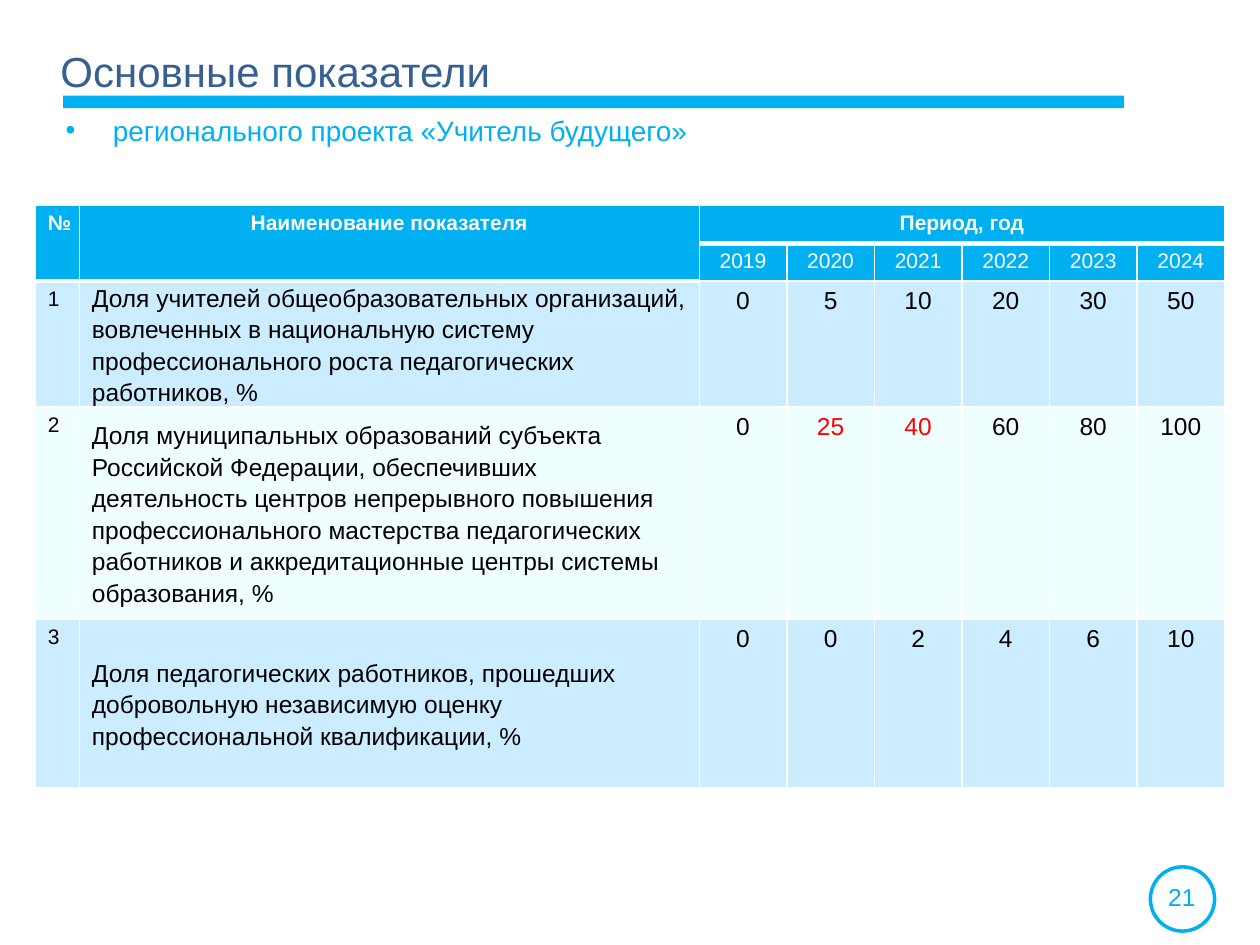
from dataclasses import dataclass
from lxml.etree import SubElement
from pptx import Presentation
from pptx.dml.color import RGBColor as RGB
from pptx.enum.shapes import MSO_SHAPE as Shape
from pptx.enum.text import MSO_ANCHOR as Anchor, MSO_AUTO_SIZE as Auto, PP_ALIGN as Align
from pptx.oxml.ns import qn
from pptx.util import Inches, Pt


@dataclass(frozen=True)
class Theme:
    font: str = "Arial"
    blue: str = "00B0F0"
    navy: str = "376092"
    white: str = "FFFFFF"
    black: str = "000000"
    red: str = "FF0000"
    bands: tuple = ("CCECFF", "EFFFFF")
    title: int = 24
    sub: int = 16
    body: int = 14
    small: int = 12


@dataclass(frozen=True)
class Metric:
    name: str
    values: tuple
    high: float
    alert: tuple = ()  # years shown in red


T = Theme()
YEARS = range(2019, 2025)
METRICS = (
    Metric("Доля учителей общеобразовательных организаций, вовлеченных в национальную "
           "систему профессионального роста педагогических работников, %",
           (0, 5, 10, 20, 30, 50), 1.0),
    Metric("Доля муниципальных образований субъекта Российской Федерации, обеспечивших "
           "деятельность центров непрерывного повышения профессионального мастерства "
           "педагогических работников и аккредитационные центры системы образования, %",
           (0, 25, 40, 60, 80, 100), 1.68, (2020, 2021)),
    Metric("Доля педагогических работников, прошедших добровольную независимую оценку "
           "профессиональной квалификации, %",
           (0, 0, 2, 4, 6, 10), 1.34),
)


def write(frame, text: str, size: int, color: str, align=Align.LEFT, bold=False):
    frame.text = text
    para = frame.paragraphs[0]
    para.alignment = align
    font = para.font
    font.name, font.size, font.bold = T.font, Pt(size), bold
    font.color.rgb = RGB.from_string(color)
    return para


def place(item, left: float, top: float, width: float, height: float) -> None:
    item.left, item.top = Inches(left), Inches(top)
    item.width, item.height = Inches(width), Inches(height)


def head(item, text: str, size: int, color: str, inset: float) -> None:
    """Fill a heading placeholder, aligned to its top left."""
    frame = item.text_frame
    frame.text = text
    props = frame.paragraphs[0]._p.get_or_add_pPr()
    props.set("marL", "0")
    props.set("indent", "0")
    SubElement(props, qn("a:buNone"))
    para = write(frame, text, size, color)
    para.space_before = Pt(0)
    frame.auto_size = Auto.NONE
    frame.vertical_anchor = Anchor.TOP
    frame.margin_top = Inches(inset)


def edge(cell, base: int = 1) -> None:
    """Draw white borders; base is the width of the bottom one."""
    props = cell._tc.get_or_add_tcPr()
    for spot, (side, width) in enumerate(zip("LRTB", (1, 1, 1, base))):
        line = props.makeelement(qn(f"a:ln{side}"), {"w": str(Pt(width))})
        fill = SubElement(line, qn("a:solidFill"))
        SubElement(fill, qn("a:srgbClr"), val=T.white)
        props.insert(spot, line)


def paint(cell, fill: str, base: int = 1) -> None:
    cell.fill.solid()
    cell.fill.fore_color.rgb = RGB.from_string(fill)
    edge(cell, base)


def draw_table(slide) -> None:
    widths = [0.35, 4.92] + [0.695] * len(YEARS)
    highs = [0.3, 0.3] + [m.high for m in METRICS]
    table = slide.shapes.add_table(len(highs), len(widths), Inches(0.28), Inches(1.63),
                                   Inches(sum(widths)), Inches(sum(highs))).table
    table.first_row = table.horz_banding = False
    for col, width in zip(table.columns, widths):
        col.width = Inches(width)
    for row, high in zip(table.rows, highs):
        row.height = Inches(high)

    # Header
    for col in range(len(widths)):
        paint(table.cell(0, col), T.blue, 3)
        paint(table.cell(1, col), T.blue, 3 if col < 2 else 1)
    for col, text in enumerate(("№", "Наименование показателя", "Период, год")):
        cell = table.cell(0, col)
        cell.merge(table.cell(1, col) if col < 2 else table.cell(0, len(widths) - 1))
        write(cell.text_frame, text, T.small, T.white, Align.CENTER, True)
    for col, year in enumerate(YEARS, 2):
        write(table.cell(1, col).text_frame, str(year), T.small, T.white, Align.CENTER)

    # Metrics
    for num, metric in enumerate(METRICS, 1):
        cells = table.rows[num + 1].cells
        for cell in cells:
            paint(cell, T.bands[(num - 1) % 2])
        write(cells[0].text_frame, str(num), T.small, T.black)
        name = cells[1]
        name.vertical_anchor = Anchor.MIDDLE
        name.margin_left = name.margin_right = Inches(0.02)
        name.margin_top = name.margin_bottom = 0
        para = write(name.text_frame, metric.name, T.body, T.black)
        para.line_spacing = Pt(18)
        para._p.get_or_add_pPr().set("marL", str(Inches(0.08)))
        for year, value, cell in zip(YEARS, metric.values, list(cells)[2:]):
            color = T.red if year in metric.alert else T.black
            write(cell.text_frame, str(value), T.body, color, Align.CENTER)


def main() -> None:
    deck = Presentation()
    deck.slide_width, deck.slide_height = Inches(10), Inches(7.5)
    slide = deck.slides.add_slide(deck.slide_layouts[1])
    shapes = slide.shapes

    # Rule under the title
    rule = shapes.add_shape(Shape.RECTANGLE, Inches(0.5), Inches(0.76), Inches(8.42), Inches(0.1))
    rule.shadow.inherit = False
    rule.fill.solid()
    rule.fill.fore_color.rgb = RGB.from_string(T.blue)
    rule.line.fill.background()

    # Page number in a ring
    ring = shapes.add_shape(Shape.OVAL, Inches(9.13), Inches(6.88), Inches(0.51), Inches(0.51))
    ring.shadow.inherit = False
    ring.fill.background()
    ring.line.color.rgb = RGB.from_string(T.blue)
    ring.line.width = Pt(2)
    page = shapes.add_textbox(Inches(9.09), Inches(6.95), Inches(0.58), Inches(0.34))
    page.text_frame.word_wrap = True
    write(page.text_frame, "21", T.body, T.blue, Align.CENTER)

    # Headings
    sub = slide.placeholders[1]
    place(sub, 0.42, 0.84, 8.56, 0.49)
    head(sub, "регионального проекта «Учитель будущего»", T.sub, T.blue, 0.06)
    place(shapes.title, 0.38, 0.28, 7.79, 0.64)
    head(shapes.title, "Основные показатели", T.title, T.navy, 0.08)

    draw_table(slide)
    deck.save("out.pptx")


if __name__ == "__main__":
    main()
